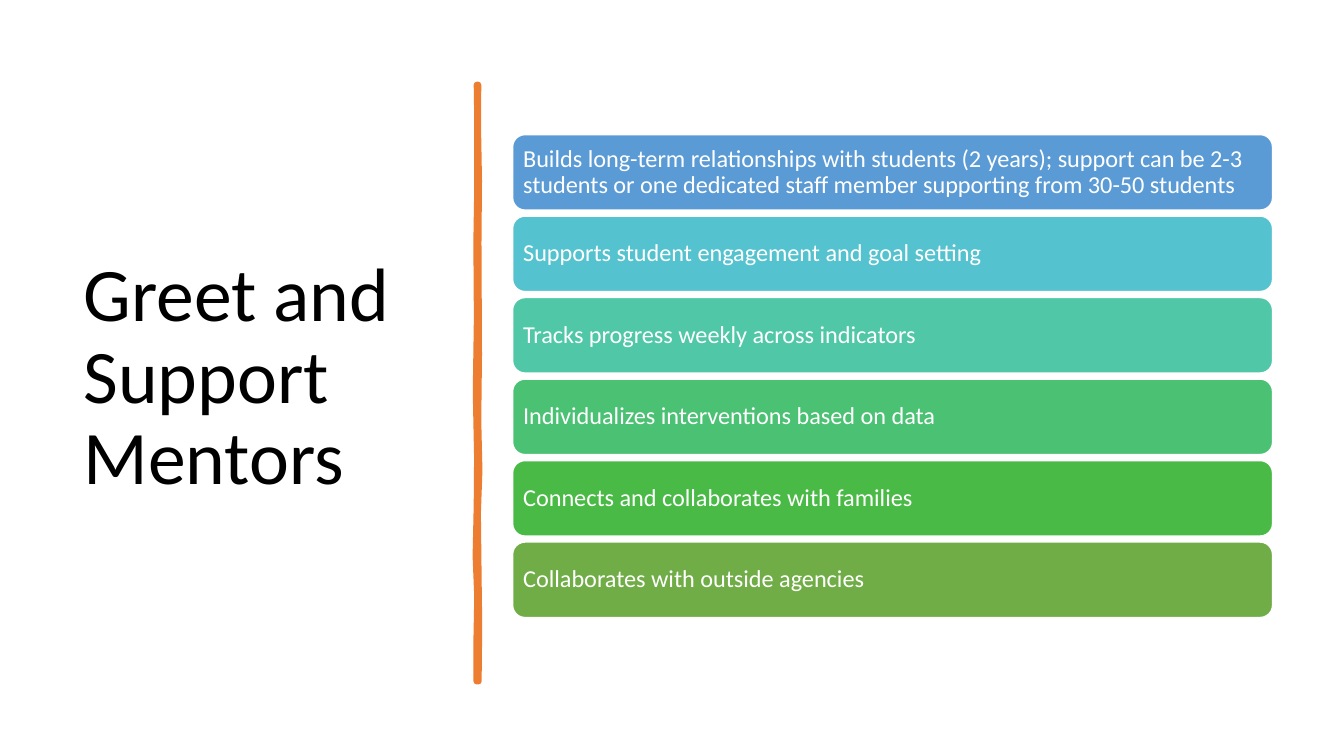
from lxml.etree import SubElement
from pptx import Presentation
from pptx.dml.color import RGBColor
from pptx.enum.shapes import MSO_SHAPE as Shape
from pptx.enum.text import MSO_ANCHOR as Anchor, PP_ALIGN as Align
from pptx.oxml.ns import qn
from pptx.util import Pt

FONT = "Calibri"
DUTIES = [
    ("Builds long-term relationships with students (2 years); support can be 2-3 "
     "students or one dedicated staff member supporting from 30-50 students", "5B9BD5"),
    ("Supports student engagement and goal setting", "55C3CF"),
    ("Tracks progress weekly across indicators", "50C8A7"),
    ("Individualizes interventions based on data", "4BC174"),
    ("Connects and collaborates with families", "4ABA46"),
    ("Collaborates with outside agencies", "70AD47"),
]
DUTY_TOP, DUTY_PITCH = 72, 43.66
DIVIDER_RIGHT = [(256.2, 45.4), (256.1, 70), (256.6, 97), (256.3, 130),
                 (256.6, 190), (256.2, 225), (256.8, 252), (256, 275),
                 (256.4, 310), (256.7, 335), (256.4, 365)]
DIVIDER_LEFT = [(255.3, 365), (255.2, 345), (255.7, 320), (254.8, 298),
                (255.4, 270), (255.6, 245), (254.9, 210), (255.5, 170),
                (255.2, 130), (255.7, 100), (255.7, 65), (255.4, 45.4)]


def paint(color_format, color):
    color_format.rgb = RGBColor.from_string(color)


def style_shape(shape, fill, line, width):
    shape.shadow.inherit = False
    shape.fill.solid()
    paint(shape.fill.fore_color, fill)
    paint(shape.line.color, line)
    shape.line.width = Pt(width)


def write_text(frame, text, size, color):
    frame.word_wrap = True
    frame.vertical_anchor = Anchor.MIDDLE
    paragraph = frame.paragraphs[0]
    paragraph.alignment = Align.LEFT
    paragraph.line_spacing = 0.9
    run = paragraph.add_run()
    run.text = text
    run.font.name = FONT
    run.font.size = Pt(size)
    paint(run.font.color, color)


def set_title(slide, text):
    title = slide.shapes.title
    title.left, title.top = Pt(37.5), Pt(38)
    title.width, title.height = Pt(201.6), Pt(329.6)
    write_text(title.text_frame, text, 40.5, "000000")


def add_divider(slide):
    start, *rest = [(Pt(x), Pt(y)) for x, y in DIVIDER_RIGHT + DIVIDER_LEFT]
    builder = slide.shapes.build_freeform(*start, scale=1.0)
    builder.add_line_segments(rest, close=True)
    divider = builder.convert_to_shape()
    style_shape(divider, "ED7D31", "ED7D31", 3.25)
    SubElement(divider.element.spPr.find(qn("a:ln")), qn("a:round"))


def add_duty(slide, row, text, color):
    duty = slide.shapes.add_shape(
        Shape.ROUNDED_RECTANGLE, Pt(274.5), Pt(DUTY_TOP + row * DUTY_PITCH),
        Pt(407.4), Pt(40.7))
    style_shape(duty, color, "FFFFFF", 1)
    frame = duty.text_frame
    frame.margin_left = frame.margin_right = Pt(3.8)
    frame.margin_top = frame.margin_bottom = Pt(3.6)
    write_text(frame, text, 13, "FFFFFF")


def main():
    deck = Presentation()
    deck.slide_width, deck.slide_height = Pt(720), Pt(405)
    slide = deck.slides.add_slide(deck.slide_layouts[5])
    set_title(slide, "Greet and Support Mentors")
    add_divider(slide)
    for row, (text, color) in enumerate(DUTIES):
        add_duty(slide, row, text, color)
    deck.save("out.pptx")


if __name__ == "__main__":
    main()
